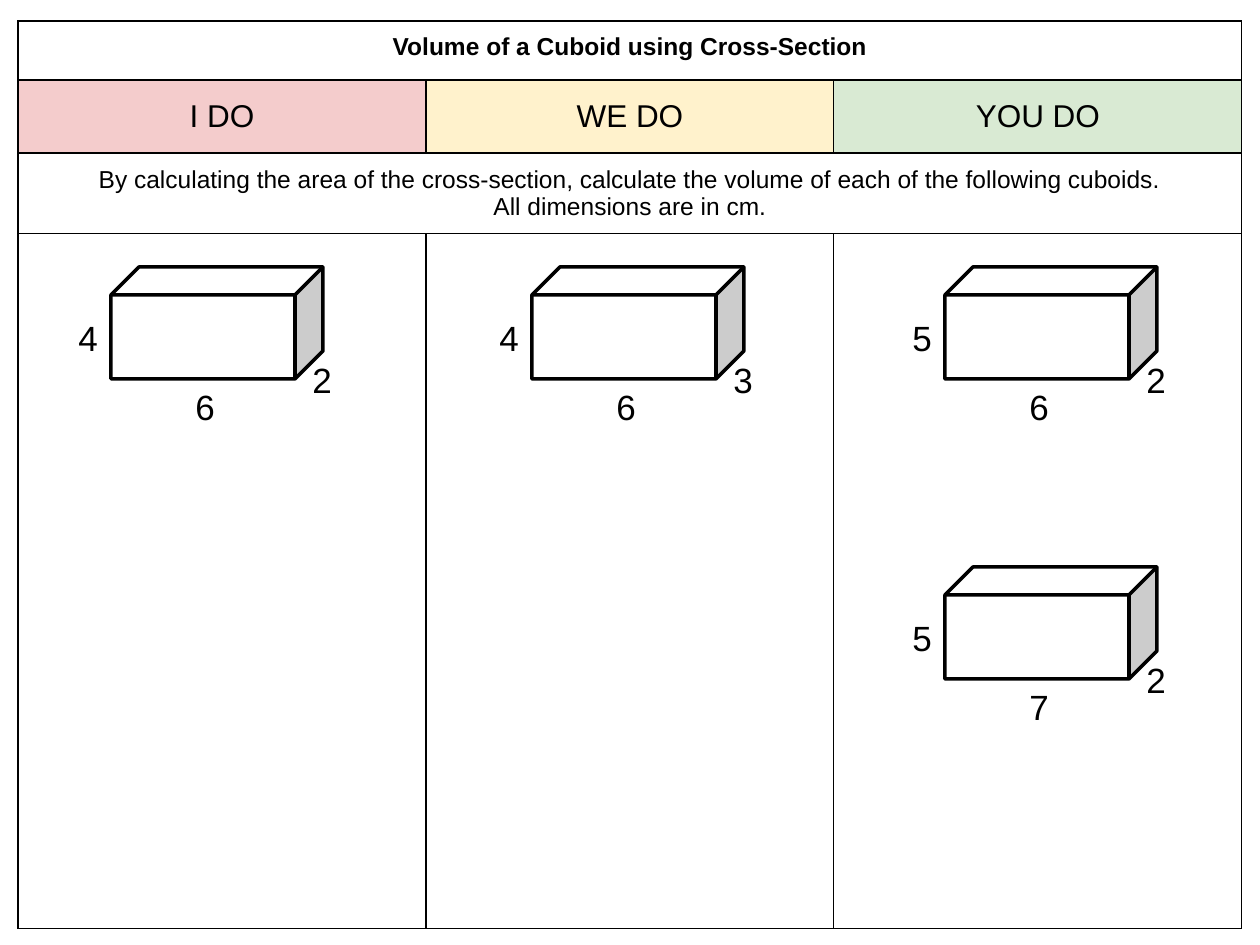
from lxml import etree
from pptx import Presentation
from pptx.dml.color import RGBColor
from pptx.enum.shapes import MSO_SHAPE
from pptx.enum.text import MSO_ANCHOR, MSO_AUTO_SIZE, PP_ALIGN
from pptx.oxml.ns import qn
from pptx.util import Emu, Pt

EMU_PER_PX = 914400 / 126
FONT = "Arial"
BLACK = RGBColor(0x00, 0x00, 0x00)
WHITE = RGBColor(0xFF, 0xFF, 0xFF)
PINK = RGBColor(0xF4, 0xCC, 0xCC)
YELLOW = RGBColor(0xFF, 0xF2, 0xCC)
GREEN = RGBColor(0xD9, 0xEA, 0xD3)

TITLE = "Volume of a Cuboid using Cross-Section"
STAGES = [("I DO", PINK), ("WE DO", YELLOW), ("YOU DO", GREEN)]
TASK = (
    "By calculating the area of the cross-section, calculate the volume "
    "of each of the following cuboids.\nAll dimensions are in cm."
)
COLUMN_WIDTH = 408
ROW_HEIGHTS = [59, 73, 81, 695]

CUBOID_SIZE = (212, 112)
LABEL_SIZE = (45, 55)
# Offsets from the cuboid's top left corner: height, depth, width
LABEL_OFFSETS = [(-45, 43), (189, 85), (72, 112)]
# Left, top, (height, depth, width)
CUBOIDS = [
    (111, 267, "426"),
    (532, 267, "436"),
    (945, 267, "526"),
    (945, 567, "527"),
]


def px(length):
    return Emu(round(length * EMU_PER_PX))


def format_text(text_frame, size, bold=False, align=PP_ALIGN.LEFT):
    for paragraph in text_frame.paragraphs:
        paragraph.alignment = align
        for run in paragraph.runs:
            run.font.name = FONT
            run.font.size = Pt(size)
            run.font.bold = bold
            run.font.color.rgb = BLACK


def add_borders(cell):
    """Put thin black lines before the fill, as the schema orders them."""
    properties = cell._tc.get_or_add_tcPr()
    for position, side in enumerate(("a:lnL", "a:lnR", "a:lnT", "a:lnB")):
        line = etree.Element(qn(side), w=str(Pt(0.75)))
        fill = etree.SubElement(line, qn("a:solidFill"))
        etree.SubElement(fill, qn("a:srgbClr"), val=str(BLACK))
        properties.insert(position, line)


def fill_cell(cell, text, size, bold=False, anchor=MSO_ANCHOR.MIDDLE):
    cell.text_frame.text = text
    cell.vertical_anchor = anchor
    format_text(cell.text_frame, size, bold, PP_ALIGN.CENTER)


def add_lesson_table(slide):
    table = slide.shapes.add_table(
        len(ROW_HEIGHTS), len(STAGES), px(18), px(21),
        px(COLUMN_WIDTH * len(STAGES)), px(sum(ROW_HEIGHTS)),
    ).table
    table.first_row = False
    table.horz_banding = False
    for column in table.columns:
        column.width = px(COLUMN_WIDTH)
    for row, height in zip(table.rows, ROW_HEIGHTS):
        row.height = px(height)
    for cell in table.iter_cells():
        cell.margin_left = cell.margin_right = px(13)
        cell.margin_top = cell.margin_bottom = px(12)
        cell.fill.solid()
        cell.fill.fore_color.rgb = WHITE
        add_borders(cell)

    last_column = len(STAGES) - 1
    for row in (0, 2):
        table.cell(row, 0).merge(table.cell(row, last_column))
    fill_cell(table.cell(0, 0), TITLE, 14, bold=True, anchor=MSO_ANCHOR.TOP)
    fill_cell(table.cell(2, 0), TASK, 14)
    for column, (stage, colour) in enumerate(STAGES):
        heading = table.cell(1, column)
        fill_cell(heading, stage, 18)
        heading.fill.fore_color.rgb = colour


def add_dimension(slide, left, top, value):
    width, height = LABEL_SIZE
    label = slide.shapes.add_textbox(px(left), px(top), px(width), px(height))
    label.text_frame.text = value
    label.text_frame.word_wrap = False
    label.text_frame.auto_size = MSO_AUTO_SIZE.SHAPE_TO_FIT_TEXT
    format_text(label.text_frame, 20)


def add_cuboid(slide, left, top, dimensions):
    width, height = CUBOID_SIZE
    cuboid = slide.shapes.add_shape(
        MSO_SHAPE.CUBE, px(left), px(top), px(width), px(height)
    )
    cuboid.shadow.inherit = False
    cuboid.fill.solid()
    cuboid.fill.fore_color.rgb = WHITE
    cuboid.line.color.rgb = BLACK
    cuboid.line.width = Pt(2)
    for value, (across, down) in zip(dimensions, LABEL_OFFSETS):
        add_dimension(slide, left + across, top + down, value)


def main():
    presentation = Presentation()
    presentation.slide_width = px(1260)
    presentation.slide_height = px(945)
    slide = presentation.slides.add_slide(presentation.slide_layouts[6])
    add_lesson_table(slide)
    for left, top, dimensions in CUBOIDS:
        add_cuboid(slide, left, top, dimensions)
    presentation.save("out.pptx")


if __name__ == "__main__":
    main()
